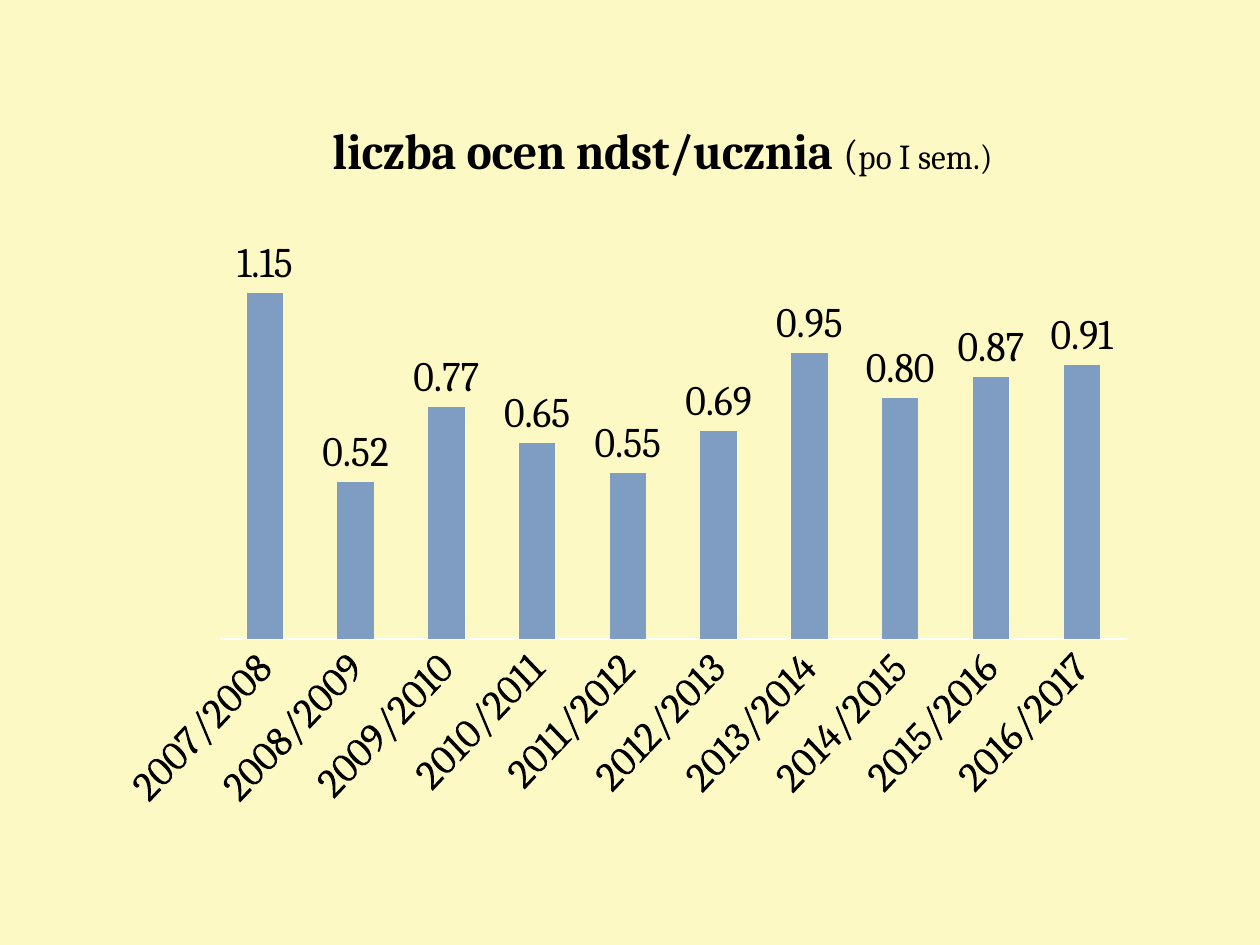
import pptx
import pptx.chart.data
import pptx.dml.color
import pptx.enum.chart
import pptx.util
from lxml import etree

WIDE, HIGH = pptx.util.Inches(10), pptx.util.Inches(7.5)
FONT = "Cambria"
RATES = [1.15, 0.52, 0.77, 0.65, 0.55, 0.69, 0.95, 0.8, 0.87, 0.91]
YEARS = [f"{year}/{year + 1}" for year in range(2007, 2017)]


def tint(hue):
    return pptx.dml.color.RGBColor.from_string(hue)


def style(font, size, bold=False):
    font.name, font.size, font.bold = FONT, pptx.util.Pt(size), bold
    font.color.rgb = tint("000000")


def pin(part, index, modes, **shares):
    """Give a chart part a fixed place, in percent of the chart."""
    space = "{%s}" % part.nsmap["c"]
    for old in part.findall(space + "layout"):
        part.remove(old)
    layout = etree.Element(space + "layout")
    manual = etree.SubElement(layout, space + "manualLayout")
    for key, value in modes.items():
        etree.SubElement(manual, space + key, val=value)
    for key, value in shares.items():
        etree.SubElement(manual, space + key, val=str(value / 100))
    part.insert(index, layout)


def add_title(chart):
    chart.has_title = True
    title = chart.chart_title
    line = title.text_frame.paragraphs[0]
    for text, size, bold in [("liczba ocen ndst/ucznia ", 28.8, True),
                             ("(", 24, False), ("po I sem.)", 20, False)]:
        run = line.add_run()
        run.text = text
        style(run.font, size, bold)
    title.include_in_layout = False
    pin(title._element, 1, {"xMode": "edge", "yMode": "edge"}, x=15.3, y=3)


def add_bars(slide, left, top, width, height):
    data = pptx.chart.data.CategoryChartData(number_format="0.00")
    data.categories = YEARS
    data.add_series("Series 1", RATES)
    kind = pptx.enum.chart.XL_CHART_TYPE.COLUMN_CLUSTERED
    chart = slide.shapes.add_chart(
        kind, left, top, width, height, data).chart
    style(chart.font, 24)
    chart.has_legend = False
    add_title(chart)

    # Bars and their values
    plot = chart.plots[0]
    plot.gap_width, plot.overlap = 150, -25
    plot.vary_by_categories = False
    fill = plot.series[0].format.fill
    fill.solid()
    fill.fore_color.rgb = tint("7F9DC3")
    plot.has_data_labels = True
    labels = plot.data_labels
    labels.show_value = True
    labels.number_format = "0.00"
    labels.number_format_is_linked = False
    labels.position = pptx.enum.chart.XL_LABEL_POSITION.OUTSIDE_END
    style(labels.font, 24)

    # Axes: slanted years, hidden scale
    years, scale = chart.category_axis, chart.value_axis
    none = pptx.enum.chart.XL_TICK_MARK.NONE
    years.major_tick_mark = years.minor_tick_mark = none
    years.format.line.color.rgb = tint("FFFFFF")
    years.format.line.width = pptx.util.Pt(1)
    style(years.tick_labels.font, 24)
    years._element.txPr.bodyPr.set("rot", str(-45 * 60000))
    scale.minimum_scale, scale.maximum_scale = 0, 1.4
    scale.has_major_gridlines = False
    scale.visible = False

    area = chart._chartSpace.chart.plotArea
    modes = {"layoutTarget": "inner", "xMode": "edge", "yMode": "edge"}
    pin(area, 0, modes, x=4.1, y=16.2, w=93, h=55.9)


def main():
    deck = pptx.Presentation()
    deck.slide_width, deck.slide_height = WIDE, HIGH
    slide = deck.slides.add_slide(deck.slide_layouts[6])
    back = slide.background.fill
    back.solid()
    back.fore_color.rgb = tint("FDF9C4")
    # Chart box in percent of the slide
    add_bars(slide, int(WIDE * 9.8 / 100), int(HIGH * 10.13 / 100),
             int(WIDE * 81.9 / 100), int(HIGH * 79.73 / 100))
    deck.save("out.pptx")


if __name__ == "__main__":
    main()
